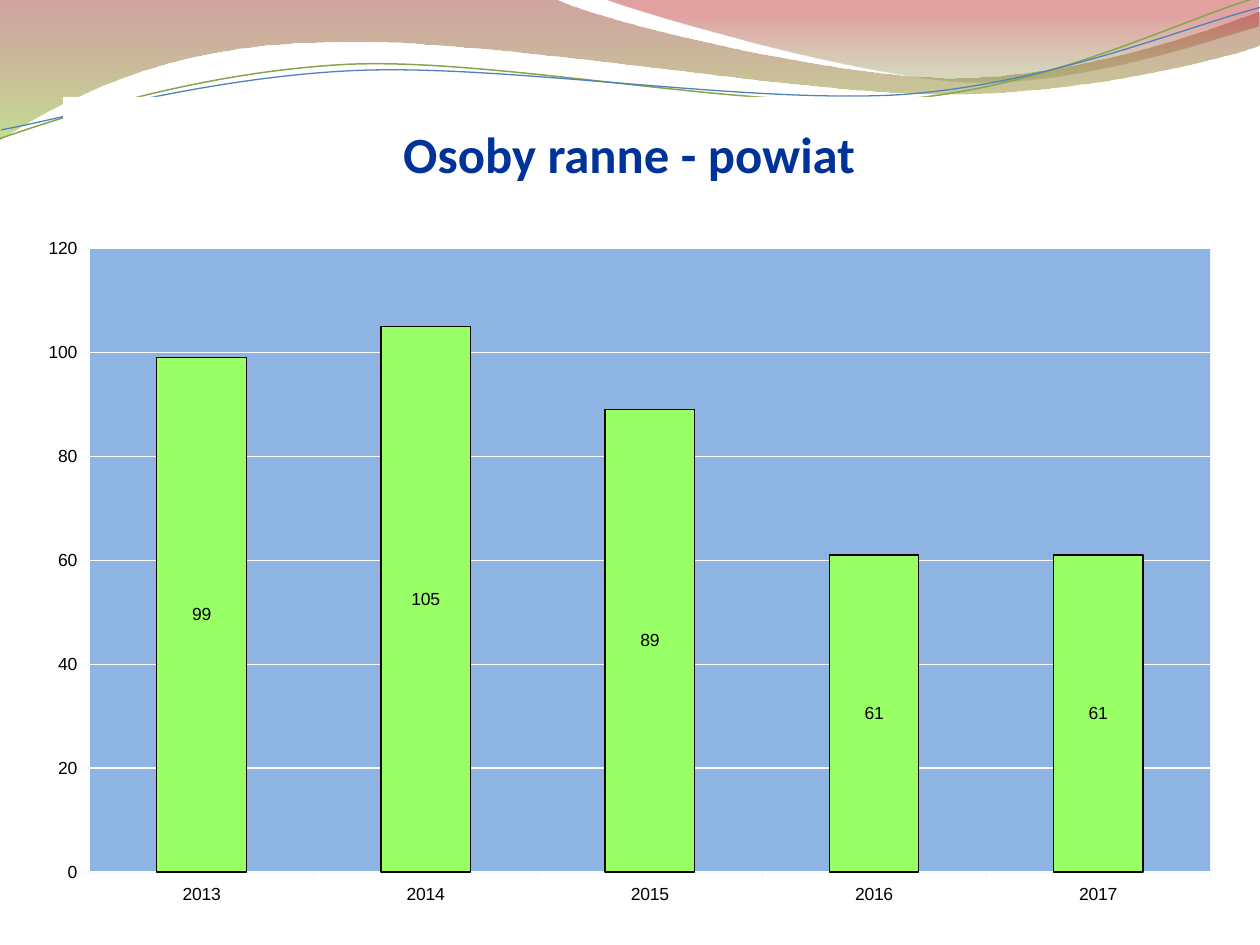
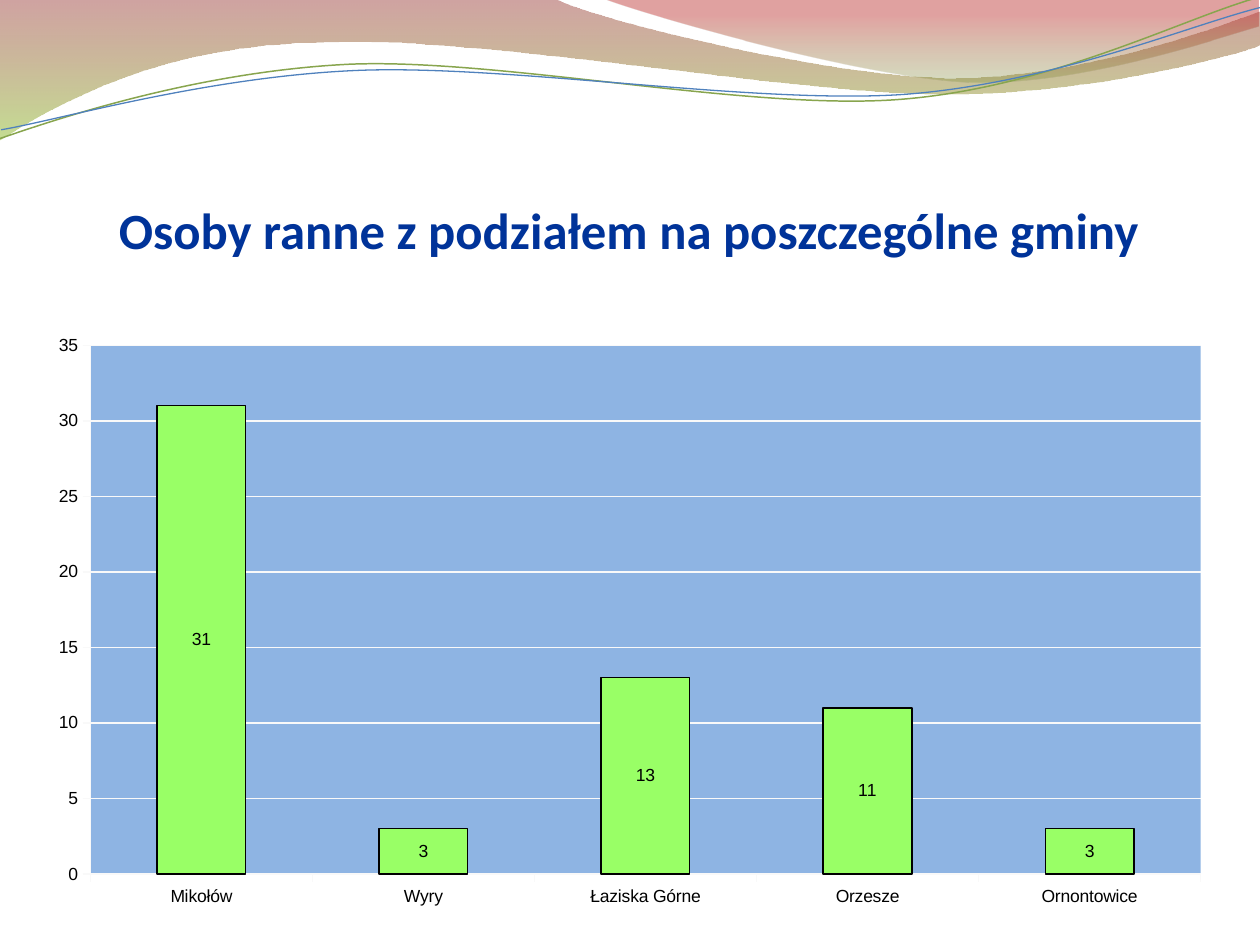
from dataclasses import dataclass

from lxml.etree import SubElement, fromstring
from pptx import Presentation
from pptx.chart.data import CategoryChartData
from pptx.dml.color import RGBColor as RGB
from pptx.enum.chart import XL_CHART_TYPE as CT, XL_LABEL_POSITION as LP, XL_TICK_MARK as TM
from pptx.enum.text import MSO_ANCHOR, MSO_AUTO_SIZE, PP_ALIGN
from pptx.oxml.ns import nsdecls, qn
from pptx.util import Pt


@dataclass(frozen=True)
class Theme:
    """Colours, fonts and type sizes of the deck."""
    white: str = "FFFFFF"
    title: str = "003399"
    text: str = "000000"
    plot: str = "8EB4E3"
    bar: str = "99FF66"
    grid: str = "F9F9F9"
    green: str = "88A54E"
    blue: str = "4F81BD"
    left_wave: tuple = ((0, "973330", 45), (100, "95C238", 55))
    right_wave: tuple = ((0, "769537", 30), (80, "BE3330", 45))
    title_font: str = "Calibri"
    chart_font: str = "Arial"
    title_size: float = 29
    chart_size: float = 10
    hairline: float = 0.75
    tilt: float = 357.3


T = Theme()

LEFT_WAVE = [(0, -0.7), (316.8, -0.7), (342, 12.2, 477.4, 44.6, 545.8, 44.6),
             (613.4, 44.6, 689.8, 18, 719.3, 6.5), (720, 25.9),
             (707.8, 31, 625.7, 54, 536.4, 54), (447.1, 53.3, 274.3, 20.2, 185, 24.5),
             (92.9, 25.2, 33.1, 59, -0.7, 80.6), (0, -0.7)]
RIGHT_WAVE = [(344.9, -0.7), (366.5, 7.9, 491, 43.9, 553, 46.8),
              (615.6, 49, 691.9, 23, 719.3, 15.1), (719.3, 0), (344.9, -0.7)]
GREEN_LINE = [(-1.4, 62.2), (34.4, 51.7, 114.1, 29.4, 199.8, 29.2),
              (285.6, 29.6, 425.9, 66.5, 512.5, 64.1), (599.1, 61.7, 676.5, 25.7, 720.2, 15.6)]
BLUE_LINE = [(-0.4, 57.2), (33.7, 53, 118.3, 32.5, 204.1, 32.9),
             (290.5, 33.4, 428.9, 63, 515.5, 61.3), (601.4, 58.9, 678.4, 30.1, 721.4, 21.3)]


def add_path(shapes, path, close):
    """Draw a freeform from straight pairs and Bezier sextuples in points."""
    pts = [(Pt(seg[i]), Pt(seg[i + 1])) for seg in path for i in range(0, len(seg), 2)]
    fb = shapes.build_freeform(*pts[0])
    fb.add_line_segments(pts[1:], close=close)
    sp = fb.convert_to_shape()
    sp.shadow.inherit = False
    lines = iter(sp.element.findall(".//" + qn("a:lnTo")))
    for seg in path[1:]:
        first = next(lines)
        if len(seg) == 6:
            curve = SubElement(first.getparent(), qn("a:cubicBezTo"))
            first.addprevious(curve)
            for line in (first, next(lines), next(lines)):
                curve.append(line[0])
                line.getparent().remove(line)
    return sp


def add_wave(shapes, path, stops, angle):
    """Draw a filled wave with a translucent gradient."""
    sp = add_path(shapes, path, True)
    sp.line.fill.background()
    gs = "".join(f'<a:gs pos="{pos * 1000}"><a:srgbClr val="{c}"><a:alpha val="{alpha * 1000}"/>'
                 "</a:srgbClr></a:gs>" for pos, c, alpha in stops)
    grad = fromstring(f'<a:gradFill {nsdecls("a")} rotWithShape="1"><a:gsLst>{gs}</a:gsLst>'
                      f'<a:lin ang="{angle * 60000}" scaled="0"/></a:gradFill>')
    sp.element.spPr.find(qn("a:custGeom")).addnext(grad)
    return sp


def add_wave_line(shapes, path, color, width):
    """Draw an open, slightly tilted curved line."""
    sp = add_path(shapes, path, False)
    sp.rotation = T.tilt
    sp.fill.background()
    style_line(sp.line, color, width)
    return sp


def style_line(line, color, width=T.hairline):
    """Give a line a solid colour and a width."""
    line.color.rgb = RGB.from_string(color)
    line.width = Pt(width)


def decorate_master(prs, slide):
    """Draw the waves and place them at the back of the slide master."""
    shapes = slide.shapes
    waves = [add_wave(shapes, LEFT_WAVE, T.left_wave, 90),
             add_wave(shapes, RIGHT_WAVE, T.right_wave, 270),
             add_wave_line(shapes, GREEN_LINE, T.green, 0.85),
             add_wave_line(shapes, BLUE_LINE, T.blue, T.hairline)]
    for i, sp in enumerate(waves):
        sp.element.nvSpPr.cNvPr.set("id", str(100 + i))
        prs.slide_master.shapes.element.insert(2 + i, sp.element)


def set_title(slide, text, box):
    """Place and format the title on its white band."""
    sp = slide.shapes.title
    sp.left, sp.top, sp.width, sp.height = (Pt(v) for v in box)
    sp.fill.solid()
    sp.fill.fore_color.rgb = RGB.from_string(T.white)
    tf = sp.text_frame
    tf.text = text
    tf.word_wrap = True
    tf.auto_size = MSO_AUTO_SIZE.NONE
    tf.vertical_anchor = MSO_ANCHOR.BOTTOM
    tf.margin_left = tf.margin_right = tf.margin_bottom = 0
    tf.margin_top = Pt(3.6)
    p = tf.paragraphs[0]
    p.alignment = PP_ALIGN.CENTER
    set_font(p.runs[0].font, T.title_font, T.title_size, T.title)
    p.runs[0].font.bold = True


def set_font(font, name, size, color):
    """Set the face, size and colour of a font."""
    font.name, font.size = name, Pt(size)
    font.color.rgb = RGB.from_string(color)


def format_plot_area(chart, box, plot):
    """Fix the inner plot area to a slide box and fill it."""
    area = chart.element.find(".//" + qn("c:plotArea"))
    for old in area.findall(qn("c:layout")):
        area.remove(old)
    left, top, width, height = box
    fractions = {"x": (plot[0] - left) / width, "y": (plot[1] - top) / height,
                 "w": plot[2] / width, "h": plot[3] / height}
    modes = "".join(f'<c:{k}Mode val="edge"/>' for k in "xy")
    sizes = "".join(f'<c:{k} val="{v:.4f}"/>' for k, v in fractions.items())
    area.insert(0, fromstring(
        f'<c:layout {nsdecls("c")}><c:manualLayout><c:layoutTarget val="inner"/>'
        f"{modes}{sizes}</c:manualLayout></c:layout>"))
    area.append(fromstring(
        f'<c:spPr {nsdecls("c", "a")}><a:solidFill><a:srgbClr val="{T.plot}"/></a:solidFill>'
        "<a:ln><a:noFill/></a:ln></c:spPr>"))


def add_bars(slide, kind, values, box, plot, top, step):
    """Add a column chart of injured people with labelled bars."""
    data = CategoryChartData()
    data.categories = list(values)
    data.add_series("Series 1", list(values.values()))
    chart = slide.shapes.add_chart(kind, *(Pt(v) for v in box), data).chart
    chart.has_legend = chart.has_title = False
    set_font(chart.font, T.chart_font, T.chart_size, T.text)
    for axis in (chart.category_axis, chart.value_axis):
        axis.major_tick_mark = TM.OUTSIDE
        axis.minor_tick_mark = TM.NONE
        style_line(axis.format.line, T.grid)
    axis = chart.value_axis
    axis.minimum_scale, axis.maximum_scale, axis.major_unit = 0, top, step
    axis.has_major_gridlines = True
    style_line(axis.major_gridlines.format.line, T.grid)
    bars = chart.plots[0]
    bars.gap_width = 150
    bars.vary_by_categories = False
    series = bars.series[0]
    series.format.fill.solid()
    series.format.fill.fore_color.rgb = RGB.from_string(T.bar)
    style_line(series.format.line, T.text)
    labels = series.data_labels
    labels.show_value = True
    labels.position = LP.CENTER
    set_font(labels.font, T.chart_font, T.chart_size, T.text)
    format_plot_area(chart, box, plot)


def add_chart_slide(prs, title, title_box, **chart):
    """Add a slide with a title and one column chart."""
    slide = prs.slides.add_slide(prs.slide_layouts[5])
    set_title(slide, title, title_box)
    add_bars(slide, **chart)
    return slide


def main():
    """Build and save the deck."""
    prs = Presentation()
    prs.slide_width, prs.slide_height = Pt(720), Pt(540)
    county = add_chart_slide(
        prs, "Osoby ranne - powiat", (36, 55.4, 647.3, 49.7), kind=CT.COLUMN_STACKED,
        values={"2013": 99, "2014": 105, "2015": 89, "2016": 61, "2017": 61},
        box=(14.4, 128.2, 691.2, 396.7), plot=(51.2, 142, 640.5, 356.4), top=120, step=20)
    add_chart_slide(
        prs, "Osoby ranne z podziałem na poszczególne gminy", (36, 82.8, 647.3, 65.5),
        kind=CT.COLUMN_CLUSTERED,
        values={"Mikołów": 31, "Wyry": 3, "Łaziska Górne": 13, "Orzesze": 11, "Ornontowice": 3},
        box=(20.2, 185, 679.7, 339.8), plot=(51.6, 197.4, 634.5, 302.2), top=35, step=5)
    decorate_master(prs, county)
    prs.save("out.pptx")


if __name__ == "__main__":
    main()
